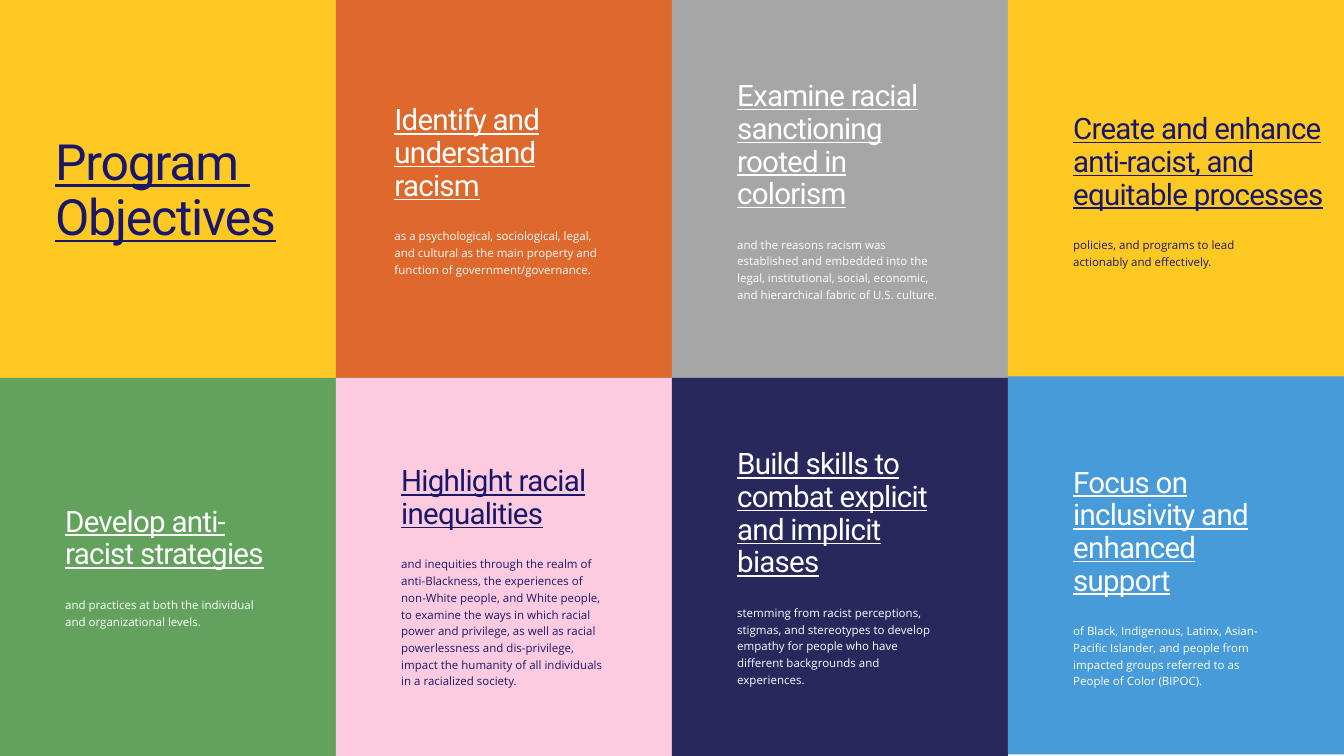
from collections import namedtuple

from pptx import Presentation
from pptx.dml.color import RGBColor
from pptx.enum.shapes import MSO_SHAPE as Preset
from pptx.enum.text import MSO_ANCHOR as Anchor, MSO_AUTO_SIZE as Fit, PP_ALIGN as Align
from pptx.util import Pt

YELLOW = RGBColor(0xFF, 0xC9, 0x24)
ORANGE = RGBColor(0xDF, 0x68, 0x2D)
GREY = RGBColor(0xA6, 0xA6, 0xA6)
GREEN = RGBColor(0x62, 0xA2, 0x5D)
PINK = RGBColor(0xFD, 0xCB, 0xDF)
NAVY = RGBColor(0x29, 0x28, 0x5D)
BLUE = RGBColor(0x46, 0x9B, 0xD8)
INK = RGBColor(0x19, 0x17, 0x69)
WHITE = RGBColor(0xFF, 0xFF, 0xFF)

COLUMNS, TILE_WIDTH, TILE_HEIGHT = 4, 360, 405
TEXT_WIDTH, HEADING_LINE, BODY_LINE, BODY_GAP = 219.6, 35, 17.9, 26

Style = namedtuple("Style", "font para tracking")
TITLE = Style({"name": "Roboto", "size": Pt(53.5), "underline": True},
              {"line_spacing": Pt(59.4), "space_before": Pt(0)}, -130)
HEADING = Style({"name": "Roboto", "size": Pt(31.6), "underline": True},
                {"line_spacing": Pt(HEADING_LINE)}, -80)
BODY = Style({"name": "Open Sans", "size": Pt(12.3), "underline": False},
             {"line_spacing": Pt(BODY_LINE), "space_before": Pt(13.4)}, 0)

Box = namedtuple("Box", "left top width height")
Objective = namedtuple(
    "Objective", "cell fill ink top heading_lines body_lines heading body left heading_width lift",
    defaults=(69.84, TEXT_WIDTH, 0))

OBJECTIVES = [
    Objective(1, ORANGE, WHITE, 111.6, 3, 3, "Identify and understand racism",
              "as a psychological, sociological, legal, and cultural as the main property "
              "and function of government/governance.", left=62.64),
    Objective(2, GREY, WHITE, 85.68, 4, 4, "Examine racial sanctioning rooted in colorism",
              "and the reasons racism was established and embedded into the legal, "
              "institutional, social, economic, and hierarchical fabric of U.S. culture."),
    Objective(3, YELLOW, INK, 120.96, 3, 2,
              "Create and enhance anti-racist, and equitable processes",
              "policies, and programs to lead actionably and effectively.",
              heading_width=272.16),
    Objective(4, GREEN, WHITE, 136.44, 2, 2, "Develop anti-racist strategies",
              "and practices at both the individual and organizational levels."),
    Objective(5, PINK, INK, 93.24, 2, 8, "Highlight racial inequalities",
              "and inequities through the realm of anti-Blackness, the experiences of "
              "non-White people, and White people, to examine the ways in which racial power "
              "and privilege, as well as racial powerlessness and dis-privilege, impact the "
              "humanity of all individuals in a racialized society."),
    Objective(6, NAVY, WHITE, 75.24, 4, 5,
              "Build skills to combat explicit and implicit biases",
              "stemming from racist perceptions, stigmas, and stereotypes to develop empathy "
              "for people who have different backgrounds and experiences."),
    Objective(7, BLUE, WHITE, 96.48, 4, 4, "Focus on inclusivity and enhanced support",
              "of Black, Indigenous, Latinx, Asian-Pacific Islander, and people from impacted "
              "groups referred to as People of Color (BIPOC).", lift=1.8),
]


def assign(target, values):
    """Set each named attribute on the target."""
    for name, value in values.items():
        setattr(target, name, value)


def cell_box(cell, lift=0):
    """Return the box of a numbered cell in the tile grid."""
    row, column = divmod(cell, COLUMNS)
    return Box(column * TILE_WIDTH, row * TILE_HEIGHT - lift, TILE_WIDTH, TILE_HEIGHT)


def add_tile(page, box, colour):
    """Fill the box with a flat rectangle."""
    tile = page.shapes.add_shape(Preset.RECTANGLE, *map(Pt, box))
    tile.shadow.inherit = False
    tile.fill.solid()
    tile.fill.fore_color.rgb = colour
    tile.line.fill.background()


def write(frame, lines, style, colour):
    """Write one paragraph per line into the text frame."""
    assign(frame, {"word_wrap": True, "auto_size": Fit.SHAPE_TO_FIT_TEXT,
                   "vertical_anchor": Anchor.TOP, "margin_left": 0, "margin_top": 0,
                   "margin_right": 0, "margin_bottom": 0})
    for index, line in enumerate(lines):
        para = frame.add_paragraph() if index else frame.paragraphs[0]
        assign(para, {"alignment": Align.LEFT, **style.para})
        span = para.add_run()
        span.text = line
        assign(span.font, style.font)
        span.font.color.rgb = colour
        span._r.get_or_add_rPr().set("spc", str(style.tracking))


def add_title(page, box):
    """Place the slide title on its own tile."""
    add_tile(page, box, YELLOW)
    title = page.shapes.title
    title.element.getparent().append(title.element)
    assign(title, {"left": Pt(box.left + 59.04), "top": Pt(box.top + 144.72),
                   "width": Pt(242.64), "height": Pt(118.8)})
    write(title.text_frame, ["Program ", "Objectives"], TITLE, INK)


def add_objective(page, box, item):
    """Place a tile with an underlined heading and its explanation."""
    add_tile(page, box, item.fill)
    left, top = box.left + item.left, box.top + item.top
    heading_height = item.heading_lines * HEADING_LINE
    parts = [
        (Box(left, top, item.heading_width, heading_height), item.heading, HEADING),
        (Box(left, top + heading_height + BODY_GAP, TEXT_WIDTH, item.body_lines * BODY_LINE),
         item.body, BODY),
    ]
    for area, text, style in parts:
        label = page.shapes.add_textbox(*map(Pt, area))
        write(label.text_frame, [text], style, item.ink)


def main():
    """Build the deck and save it."""
    deck = Presentation()
    assign(deck, {"slide_width": Pt(COLUMNS * TILE_WIDTH), "slide_height": Pt(2 * TILE_HEIGHT)})
    page = deck.slides.add_slide(deck.slide_layouts.get_by_name("Title Only"))
    add_title(page, cell_box(0))
    for item in OBJECTIVES:
        add_objective(page, cell_box(item.cell, item.lift), item)
    deck.save("out.pptx")


if __name__ == "__main__":
    main()
